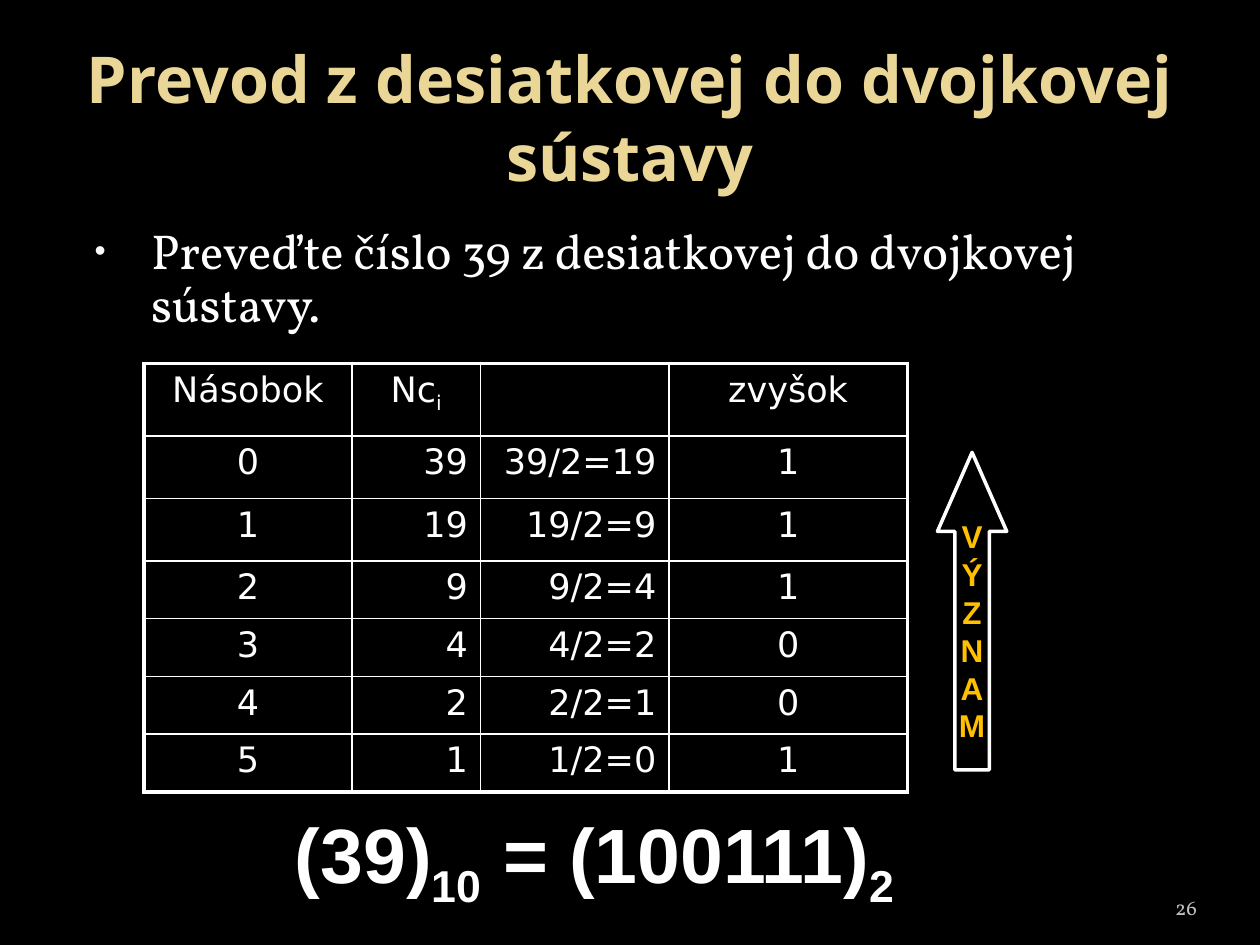
from lxml import etree
from pptx import Presentation
from pptx.dml.color import RGBColor
from pptx.enum.shapes import MSO_SHAPE
from pptx.enum.text import MSO_ANCHOR, PP_ALIGN
from pptx.oxml.ns import qn
from pptx.util import Pt

LEFT, MID, RIGHT = PP_ALIGN.LEFT, PP_ALIGN.CENTER, PP_ALIGN.RIGHT
CENTER, BOTTOM = MSO_ANCHOR.MIDDLE, MSO_ANCHOR.BOTTOM
ARROW = MSO_SHAPE.UP_ARROW

HEX = {"back": "000000", "title": "EAD696", "text": "FFFFFF",
       "dot": "F9F9F9", "page": "BDBDBD", "gold": "FFC000"}
RGB = {key: RGBColor.from_string(val) for key, val in HEX.items()}

FONTS = {
    "title": {"name": "Noto Sans", "size": Pt(36.9), "bold": True},
    "task": {"name": "Vollkorn", "size": Pt(28), "bold": False},
    "cell": {"name": "DejaVu Sans", "size": Pt(20), "bold": False},
    "page": {"name": "Vollkorn", "size": Pt(12), "bold": False},
    "sign": {"name": "Arial", "size": Pt(18), "bold": True},
    "sum": {"name": "Arial", "size": Pt(44), "bold": True},
}


def write(para, parts, font, tint, align):
    para.alignment = align
    for num, part in enumerate(parts):
        run = para.add_run()
        run.text = part
        for key, val in FONTS[font].items():
            setattr(run.font, key, val)
        run.font.color.rgb = RGB[tint]
        if num % 2:
            run.font._element.set("baseline", "-25000")


def place(shape, left, top, width, height):
    box = {"left": left, "top": top, "width": width, "height": height}
    for key, val in box.items():
        setattr(shape, key, Pt(val))


deck = Presentation()
deck.slide_width, deck.slide_height = Pt(720), Pt(540)
slide = deck.slides.add_slide(deck.slide_layouts[1])
slide.background.fill.solid()
slide.background.fill.fore_color.rgb = RGB["back"]

title, body = slide.shapes.title, slide.placeholders[1]
place(title, 36, 21.6, 648, 90)
title.text_frame.vertical_anchor = CENTER
write(title.text_frame.paragraphs[0],
      ["Prevod z desiatkovej do dvojkovej sústavy"], "title", "title", MID)

place(body, 36, 126, 607.7, 70.6)
para = body.text_frame.paragraphs[0]
write(para, ["Preveďte číslo 39 z desiatkovej do dvojkovej sústavy."],
      "task", "text", LEFT)
para.line_spacing, para.space_before = 0.9, Pt(5.6)
prop = para._p.get_or_add_pPr()
prop.set("marL", str(Pt(43.2)))
prop.set("indent", str(-Pt(32.4)))
tint = etree.SubElement(prop, qn("a:buClr"))
etree.SubElement(tint, qn("a:srgbClr"), val=HEX["dot"])
etree.SubElement(prop, qn("a:buSzPct"), val="65000")
etree.SubElement(prop, qn("a:buFont"), typeface="Arial")
etree.SubElement(prop, qn("a:buChar"), char="•")

rows = [[["Násobok"], ["Nc", "i"], [], ["zvyšok"]]]
num = 39
while num:
    half, rest = divmod(num, 2)
    rows.append([[str(len(rows) - 1)], [str(num)],
                 [f"{num}/2={half}"], [str(rest)]])
    num = half

wide = [118.8, 73.5, 107.8, 136.1]
high = [41.5, 35.7, 35.7, 33, 33, 33, 33]
grid = slide.shapes.add_table(len(rows), len(wide), Pt(82.3), Pt(207.6),
                              Pt(sum(wide)), Pt(sum(high))).table
grid.first_row = grid.horz_banding = False
for col, val in zip(grid.columns, wide):
    col.width = Pt(val)
for row, val in zip(grid.rows, high):
    row.height = Pt(val)
for r, row in enumerate(rows):
    for c, parts in enumerate(row):
        cell = grid.cell(r, c)
        para = cell.text_frame.paragraphs[0]
        write(para, parts, "cell", "text", RIGHT if r and c in (1, 2) else MID)
        para.space_before = Pt(4)
        prop = cell._tc.get_or_add_tcPr()
        edges = {"L": c == 0, "R": c == len(wide) - 1,
                 "T": r == 0, "B": r == len(rows) - 1}
        for side, outer in edges.items():
            line = etree.SubElement(prop, qn(f"a:ln{side}"),
                                    w=str(Pt(2.25 if outer else 1)))
            fill = etree.SubElement(line, qn("a:solidFill"))
            etree.SubElement(fill, qn("a:srgbClr"), val=HEX["text"])
        cell.fill.background()

page = slide.shapes.add_textbox(Pt(516.2), Pt(491.8), Pt(167.8), Pt(37.4))
frame = page.text_frame
form = {"word_wrap": True, "vertical_anchor": BOTTOM,
        "margin_left": 0, "margin_right": 0}
for key, val in form.items():
    setattr(frame, key, val)
write(frame.paragraphs[0], ["26"], "page", "page", RIGHT)

arrow = slide.shapes.add_shape(ARROW, Pt(535.7), Pt(258.5), Pt(39.6), Pt(181.4))
arrow.adjustments[0], arrow.adjustments[1] = 0.5, 1.14
arrow.shadow.inherit = False
arrow.fill.background()
arrow.line.color.rgb = RGB["text"]
arrow.line.width = Pt(2)
frame = arrow.text_frame
frame.word_wrap = False
frame.vertical_anchor = CENTER
for num, sign in enumerate("VÝZNAM"):
    para = frame.add_paragraph() if num else frame.paragraphs[0]
    write(para, [sign], "sign", "gold", MID)

total = slide.shapes.add_textbox(Pt(-20.2), Pt(457.2), Pt(720), Pt(60))
total.text_frame.word_wrap = True
write(total.text_frame.paragraphs[0], ["(39)", "10", " = (100111)", "2"],
      "sum", "text", MID)

deck.save("out.pptx")
